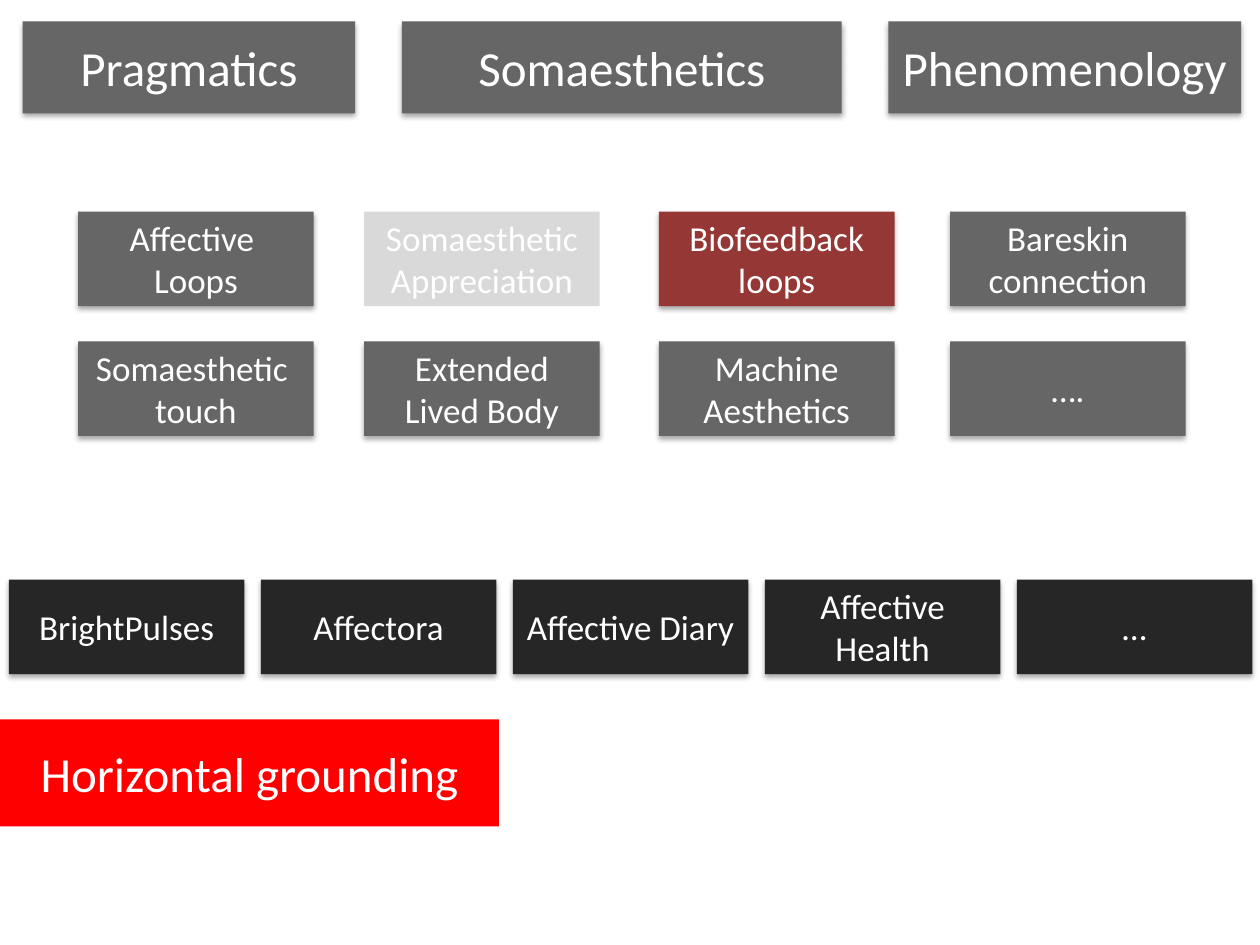
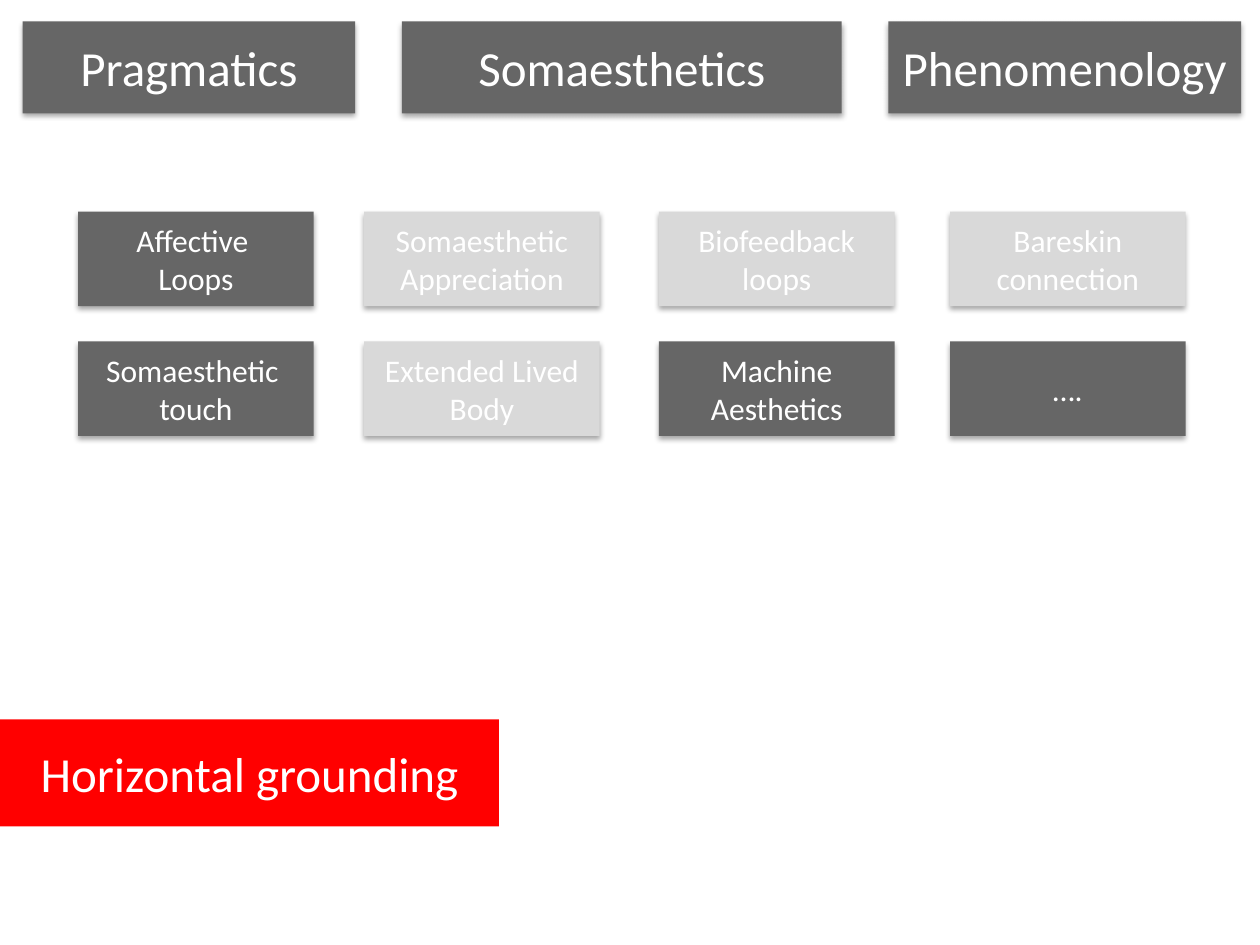
from dataclasses import dataclass

from lxml import etree
from pptx import Presentation, util as u
from pptx.dml.color import RGBColor
from pptx.enum import shapes, text
from pptx.oxml import ns

# Shared look
FONT = "Calibri"
WHITE, GREY, PALE = "FFFFFF", "666666", "D9D9D9"
BLACK, WINE, RED = "262626", "953735", "FF0000"
BIG = 28

# Grid, in inches
WIDE, HIGH = 1.87, 0.75
COLS = (0.62, 2.89, 5.23, 7.54)
ROWS = (1.68, 2.71)
LAST, LEFT, STEP = 4.6, 0.07, 2.0


@dataclass(frozen=True)
class Box:
    label: str
    left: float
    top: float
    width: float = WIDE
    height: float = HIGH
    fill: str = GREY
    size: int = 20
    shade: bool = True


TITLE = Box("Horizontal grounding", 0, 5.71, 3.96, 0.85, RED, BIG, False)
HEADS = [Box(name, left, 0.17, width, 0.73, size=BIG) for name, left, width in (
    ("Pragmatics", 0.18, 2.64),
    ("Somaesthetics", 3.19, 3.49),
    ("Phenomenology", 7.05, 2.8),
)]


def paint(color: str) -> RGBColor:
    return RGBColor.from_string(color)


def cast(shape) -> None:
    """Add a soft black shadow straight below the shape."""
    glow = shape._element.spPr.find(ns.qn("a:effectLst"))
    drop = etree.SubElement(
        glow, ns.qn("a:outerShdw"), blurRad=str(u.Pt(3.1)),
        dist=str(u.Pt(1.8)), dir="5400000", rotWithShape="0")
    tint = etree.SubElement(drop, ns.qn("a:srgbClr"), val="000000")
    etree.SubElement(tint, ns.qn("a:alpha"), val="35000")


def style(shape, box: Box) -> None:
    """Fill a shape and write its label, one paragraph a line."""
    shape.fill.solid()
    shape.fill.fore_color.rgb = paint(box.fill)
    shape.line.fill.background()
    frame = shape.text_frame
    frame.word_wrap = True
    frame.auto_size = text.MSO_AUTO_SIZE.NONE
    frame.vertical_anchor = text.MSO_ANCHOR.MIDDLE
    for i, line in enumerate(box.label.split("\n")):
        para = frame.add_paragraph() if i else frame.paragraphs[0]
        para.alignment = text.PP_ALIGN.CENTER
        run = para.add_run()
        run.text = line
        run.font.name = FONT
        run.font.size = u.Pt(box.size)
        run.font.color.rgb = paint(WHITE)


def place(box: Box) -> list[int]:
    return [u.Inches(n) for n in (box.left, box.top, box.width, box.height)]


def draw(slide, box: Box) -> None:
    shape = slide.shapes.add_shape(shapes.MSO_SHAPE.RECTANGLE, *place(box))
    style(shape, box)
    shape.shadow.inherit = False
    if box.shade:
        cast(shape)


def head(slide, box: Box) -> None:
    title = slide.shapes.title
    title.left, title.top, title.width, title.height = place(box)
    style(title, box)


def themes(body: str, size: int, fills: dict[str, str],
           flat: str = "") -> list[Box]:
    """Lay the eight themes on the grid; fills and flat go by first word."""
    names = ("Affective \nLoops", "Somaesthetic\nAppreciation",
             "Biofeedback\nloops", "Bareskin\nconnection",
             "Somaesthetic \ntouch", body, "Machine\nAesthetics", "….")
    boxes = []
    for i, name in enumerate(names):
        row, col = divmod(i, len(COLS))
        key = name.split()[-1]
        boxes.append(Box(name, COLS[col], ROWS[row], size=size,
                         fill=fills.get(key, GREY), shade=key != flat))
    return boxes


def build(deck, boxes: list[Box]) -> None:
    slide = deck.slides.add_slide(deck.slide_layouts[5])
    head(slide, TITLE)
    for box in HEADS + boxes:
        draw(slide, box)


def main() -> None:
    deck = Presentation()
    deck.slide_width, deck.slide_height = u.Inches(10), u.Inches(7.5)

    # Slide 1: themes above a row of example systems
    works = ("BrightPulses", "Affectora", "Affective Diary",
             "Affective Health", "…")
    cases = [Box(name, LEFT + i * STEP, LAST, fill=BLACK)
             for i, name in enumerate(works)]
    fills = {"Appreciation": PALE, "loops": WINE}
    build(deck, themes("Extended Lived Body", 20, fills, "Appreciation") + cases)

    # Slide 2: half of the themes faded
    faded = dict.fromkeys(("Appreciation", "loops", "connection", "Body"), PALE)
    build(deck, themes("Extended Lived\nBody", 18, faded))

    deck.save("out.pptx")


if __name__ == "__main__":
    main()
